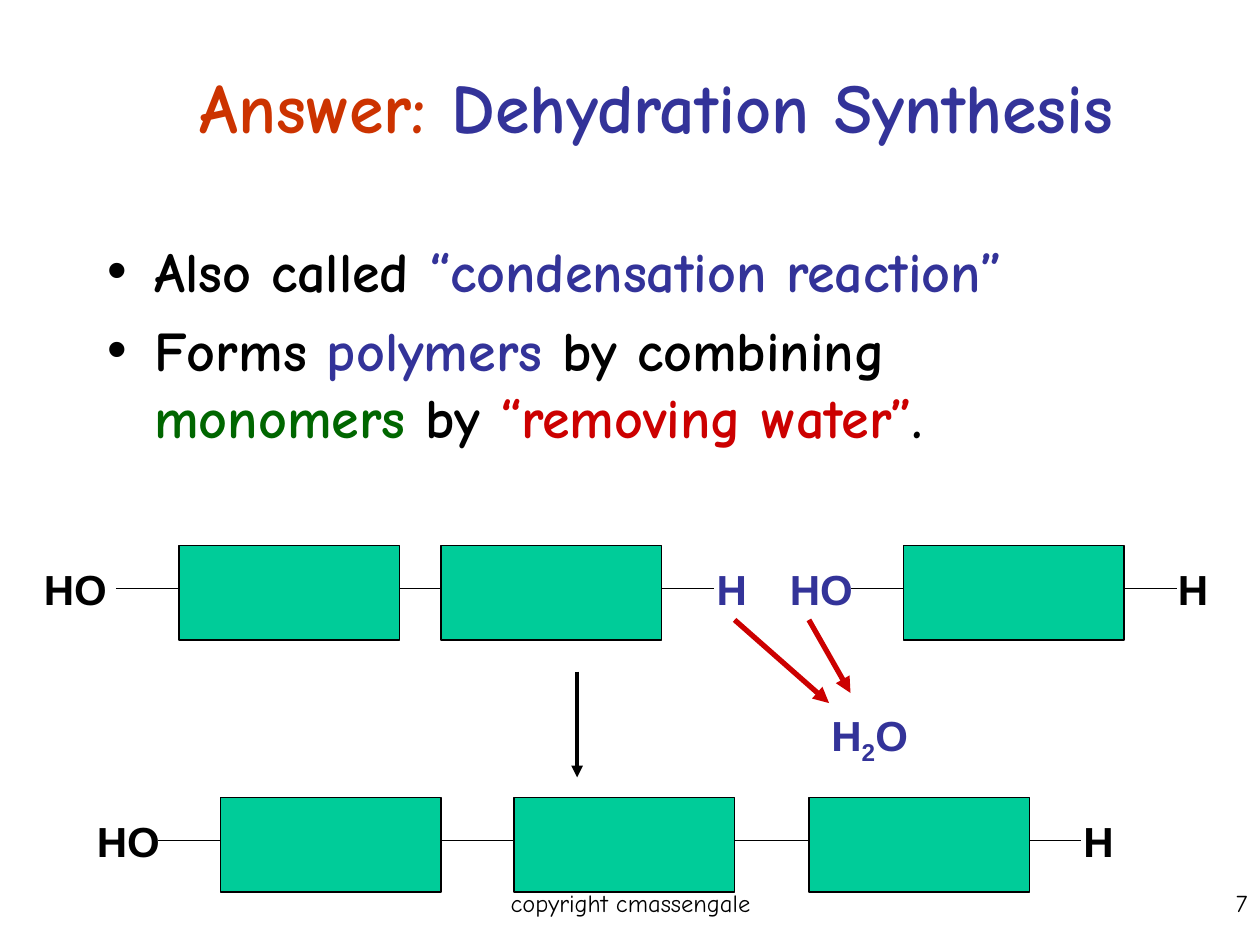
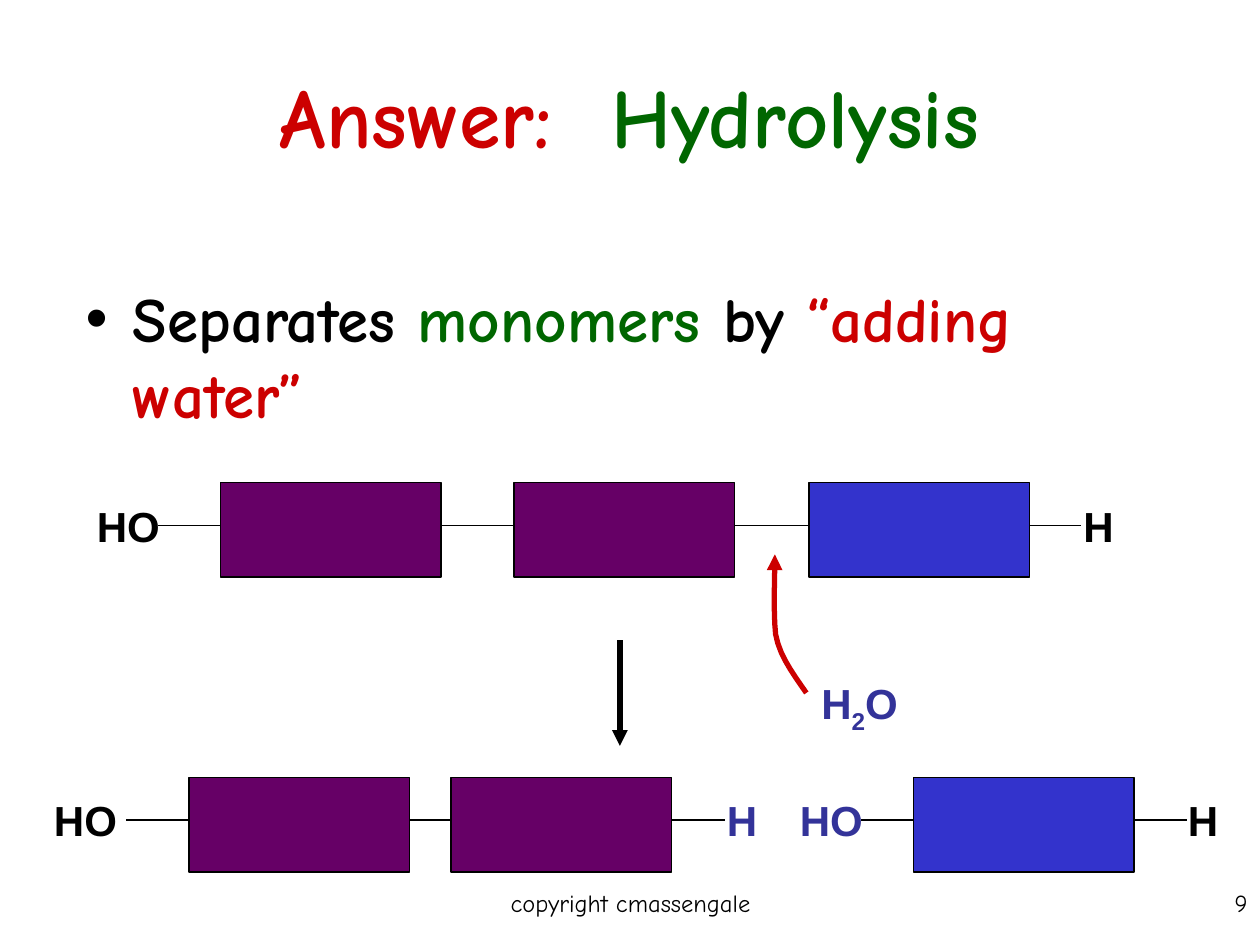
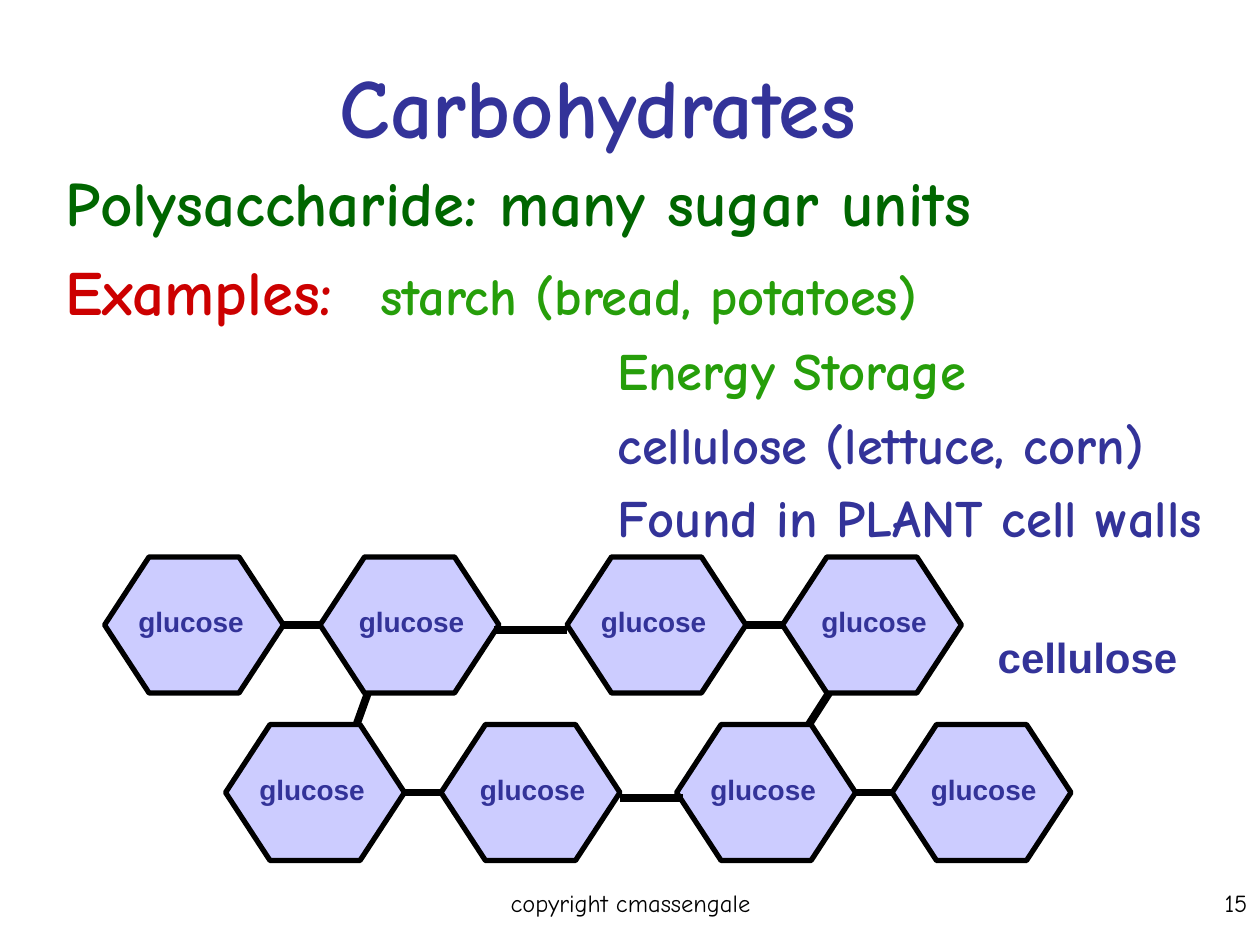
from lxml import etree
from pptx import Presentation
from pptx.dml.color import RGBColor
from pptx.enum.shapes import MSO_CONNECTOR, MSO_SHAPE
from pptx.enum.text import MSO_ANCHOR, MSO_AUTO_SIZE, PP_ALIGN
from pptx.oxml.ns import qn
from pptx.util import Inches, Pt

STRAIGHT = MSO_CONNECTOR.STRAIGHT
RECTANGLE, HEXAGON = MSO_SHAPE.RECTANGLE, MSO_SHAPE.HEXAGON
MIDDLE = MSO_ANCHOR.MIDDLE
NO_FIT, GROW = MSO_AUTO_SIZE.NONE, MSO_AUTO_SIZE.SHAPE_TO_FIT_TEXT
LEFT, CENTER, RIGHT = PP_ALIGN.LEFT, PP_ALIGN.CENTER, PP_ALIGN.RIGHT

HAND_FONT, LABEL_FONT = "Comic Neue", "Arial"
COLORS = {
    "black": "000000", "blue": "333399", "red": "CC0000", "orange": "CC3300",
    "green": "006600", "lime": "269E0A", "teal": "00CC99", "purple": "660066",
    "royal": "3333CC", "lilac": "CCCCFF",
}

# Monomer rows: offsets from the left edge of the first block
BLOCK_WIDTH, BLOCK_HEIGHT = 1.75, 0.75
JOINED = {
    "blocks": [0, 2.33, 4.67],
    "bonds": [(-0.5, 0), (1.75, 2.33), (4.08, 4.67), (6.42, 6.83)],
    "ends": [("HO", -1.08, "black"), ("H", 6.75, "black")],
}
SEPARATE = {
    "blocks": [0, 2.08, 5.75],
    "bonds": [(-0.5, 0), (1.75, 2.08), (3.83, 4.25), (5.33, 5.75), (7.5, 7.92)],
    "ends": [("HO", -1.17, "black"), ("H", 4.17, "blue"),
             ("HO", 4.75, "blue"), ("H", 7.83, "black")],
}
LABEL_WIDTHS = {"H": 0.44, "HO": 0.7}

# Glucose units
UNIT_WIDTH, UNIT_HEIGHT, UNIT_STEP = 1.42, 1.08, 1.71


def rgb(name):
    return RGBColor.from_string(COLORS[name])


def add_span(para, text, size=24, color="black", font=LABEL_FONT, bold=True,
             baseline=None):
    span = para.add_run()
    span.text = text
    span.font.name = font
    span.font.size = Pt(size)
    span.font.bold = bold
    span.font.color.rgb = rgb(color)
    if baseline:
        span.font._element.set("baseline", str(baseline))


def place(shape, left, top, width, height):
    shape.left, shape.top = Inches(left), Inches(top)
    shape.width, shape.height = Inches(width), Inches(height)


def add_label(slide, left, top, width, height=0.5, align=LEFT, grow=True):
    """Add a text box and return its first paragraph."""
    box = slide.shapes.add_textbox(Inches(left), Inches(top),
                                   Inches(width), Inches(height))
    frame = box.text_frame
    frame.word_wrap = not grow
    frame.auto_size = GROW if grow else NO_FIT
    para = frame.paragraphs[0]
    para.alignment = align
    return para


def set_title(slide, area, spans, size):
    place(slide.shapes.title, *area)
    frame = slide.shapes.title.text_frame
    frame.auto_size = NO_FIT
    frame.vertical_anchor = MIDDLE
    para = frame.paragraphs[0]
    para.alignment = CENTER
    for text, color in spans:
        add_span(para, text, size, color, HAND_FONT)


def set_body(slide, area, lines):
    """Fill the body placeholder; each line is a list of (text, color, size)."""
    body = slide.placeholders[1]
    place(body, *area)
    frame = body.text_frame
    frame.auto_size = NO_FIT
    for index, spans in enumerate(lines):
        para = frame.add_paragraph() if index else frame.paragraphs[0]
        if index == 0:
            para.space_before = Pt(0)
        for text, color, size in spans:
            add_span(para, text, size, color, HAND_FONT)
    return frame.paragraphs


def remove_bullet(para, indent=0, tab=None):
    properties = para._p.get_or_add_pPr()
    properties.set("marL", str(Inches(indent)))
    properties.set("indent", "0")
    etree.SubElement(properties, qn("a:buNone"))
    if tab:
        tabs = etree.SubElement(properties, qn("a:tabLst"))
        etree.SubElement(tabs, qn("a:tab"), pos=str(Inches(tab)), algn="l")


def style_line(shape, width, color="black", arrow=False):
    shape.line.color.rgb = rgb(color)
    shape.line.width = Pt(width)
    if arrow:
        etree.SubElement(shape.line._get_or_add_ln(), qn("a:tailEnd"),
                         type="triangle")


def add_line(slide, start, end, width=1, color="black", arrow=False):
    line = slide.shapes.add_connector(STRAIGHT, *map(Inches, start + end))
    style_line(line, width, color, arrow)
    etree.SubElement(line._element.spPr, qn("a:effectLst"))


def add_block(slide, kind, area, fill, width=1):
    block = slide.shapes.add_shape(kind, *map(Inches, area))
    block.shadow.inherit = False
    block.fill.solid()
    block.fill.fore_color.rgb = rgb(fill)
    style_line(block, width)
    return block


def add_curved_arrow(slide, start, curves, width, color, steps=8):
    """Trace joined Bezier curves, each given as two controls and an end."""
    points = [start]
    for first, second, end in curves:
        origin = points[-1]
        for step in range(1, steps + 1):
            t = step / steps
            weights = ((1 - t) ** 3, 3 * t * (1 - t) ** 2,
                       3 * t ** 2 * (1 - t), t ** 3)
            corners = (origin, first, second, end)
            points.append(tuple(sum(w * c[axis] for w, c in zip(weights, corners))
                                for axis in (0, 1)))
    builder = slide.shapes.build_freeform(Inches(start[0]), Inches(start[1]))
    builder.add_line_segments([(Inches(x), Inches(y)) for x, y in points[1:]],
                              close=False)
    curve = builder.convert_to_shape()
    curve.shadow.inherit = False
    curve.fill.background()
    style_line(curve, width, color, arrow=True)


def add_monomers(slide, row, left, top, fills):
    for offset, fill in zip(row["blocks"], fills):
        add_block(slide, RECTANGLE,
                  (left + offset, top, BLOCK_WIDTH, BLOCK_HEIGHT), fill)
    bond_y = top + 0.34
    for start, end in row["bonds"]:
        add_line(slide, (left + start, bond_y), (left + end, bond_y))
    for text, offset, color in row["ends"]:
        para = add_label(slide, left + offset, top + 0.09, LABEL_WIDTHS[text])
        add_span(para, text, color=color)


def add_water(slide, left, top):
    para = add_label(slide, left, top, 0.82)
    for text, baseline in (("H", None), ("2", -25000), ("O", None)):
        add_span(para, text, color="blue", baseline=baseline)


def add_glucose_pair(slide, left, top):
    for x, label_offset in ((left, 0.17), (left + UNIT_STEP, 0.21)):
        unit = add_block(slide, HEXAGON, (x, top, UNIT_WIDTH, UNIT_HEIGHT),
                         "lilac", 3)
        unit.adjustments[0] = 0.327
        para = add_label(slide, x + label_offset, top + 0.33, 1.04, 0.37)
        add_span(para, "glucose", 16, "blue")
    bond_y = top + UNIT_HEIGHT / 2
    add_line(slide, (left + UNIT_WIDTH, bond_y), (left + UNIT_STEP, bond_y), 4.5)


def add_page(deck, number):
    """Add a slide with the shared footer and page number."""
    slide = deck.slides.add_slide(deck.slide_layouts[1])
    for text, left, width, align in ((number, 7.92, 2.08, RIGHT),
                                     ("copyright cmassengale", 3.42, 3.17, CENTER)):
        para = add_label(slide, left, 7, width, align=align, grow=False)
        add_span(para, text, 14, font=HAND_FONT, bold=False)
    return slide


def build_dehydration(deck):
    slide = add_page(deck, "7")
    set_title(slide, (0.67, 0.5, 9.08, 0.67),
              [("Answer:", "orange"), (" Dehydration Synthesis", "blue")], 40)
    set_body(slide, (0.75, 1.83, 8.5, 4.5), [
        [("Also called ", "black", 32), ("“condensation reaction”", "blue", 32)],
        [("Forms ", "black", 32), ("polymers", "blue", 32),
         (" by combining ", "black", 32), ("monomers", "green", 32),
         (" by ", "black", 32), ("“removing water”", "red", 32),
         (".", "black", 32)],
    ])
    fills = ["teal"] * 3
    add_monomers(slide, JOINED, 1.75, 6.33, fills)
    add_monomers(slide, SEPARATE, 1.42, 4.33, fills)
    add_line(slide, (4.58, 5.33), (4.58, 6.17), 2.25, arrow=True)
    add_water(slide, 6.5, 5.58)
    add_line(slide, (5.83, 4.92), (6.58, 5.58), 3, "red", arrow=True)
    add_line(slide, (6.42, 4.92), (6.75, 5.5), 3, "red", arrow=True)


def build_hydrolysis(deck):
    slide = add_page(deck, "9")
    set_title(slide, (1.08, 0.58, 7.83, 0.67),
              [("Answer:  ", "red"), ("Hydrolysis", "green")], 48)
    set_body(slide, (0.58, 2.17, 8.83, 4.5), [
        [("Separates ", "black", 36), ("monomers", "green", 36),
         (" by ", "black", 36), ("“adding water”", "red", 36)],
    ])
    fills = ["purple", "purple", "royal"]
    add_monomers(slide, SEPARATE, 1.5, 6.17, fills)
    add_monomers(slide, JOINED, 1.75, 3.83, fills)
    add_line(slide, (4.92, 5.08), (4.92, 5.92), 3, arrow=True)
    add_water(slide, 6.42, 5.33)
    add_curved_arrow(slide, (6.4, 5.5), [
        ((6.29, 5.34), (6.15, 5.16), (6.15, 4.96)),
        ((6.14, 4.77), (6.15, 4.58), (6.15, 4.4)),
    ], 3, "red")


def build_carbohydrates(deck):
    slide = add_page(deck, "15")
    set_title(slide, (0.83, 0.5, 7.83, 0.67), [("Carbohydrates", "blue")], 48)
    paras = set_body(slide, (0.42, 1.25, 9.33, 4.75), [
        [("Polysaccharide: many sugar units", "green", 36)],
        [("Examples:\t", "red", 36), ("starch (bread, potatoes)", "lime", 30)],
        [("Energy Storage", "lime", 30)],
        [("cellulose (lettuce, corn)", "blue", 30)],
        [("Found in PLANT cell walls", "blue", 30)],
    ])
    remove_bullet(paras[0])
    remove_bullet(paras[1], tab=2.38)
    for para in paras[2:]:
        remove_bullet(para, indent=4.38)

    # Two rows of glucose pairs, then the bonds between pairs
    for left, top in ((0.83, 4.42), (1.79, 5.75), (4.5, 4.42), (5.37, 5.75)):
        add_glucose_pair(slide, left, top)
    for start, end in (((3.92, 5), (4.5, 5)), ((4.92, 6.33), (5.42, 6.33)),
                       ((2.83, 5.75), (2.92, 5.5)), ((6.42, 5.75), (6.58, 5.5))):
        add_line(slide, start, end, 4.5)
    add_span(add_label(slide, 7.82, 4.96, 1.63), "cellulose", color="blue")


def main():
    deck = Presentation()
    deck.slide_width, deck.slide_height = Inches(10), Inches(7.5)
    build_dehydration(deck)
    build_hydrolysis(deck)
    build_carbohydrates(deck)
    deck.save("out.pptx")


if __name__ == "__main__":
    main()
